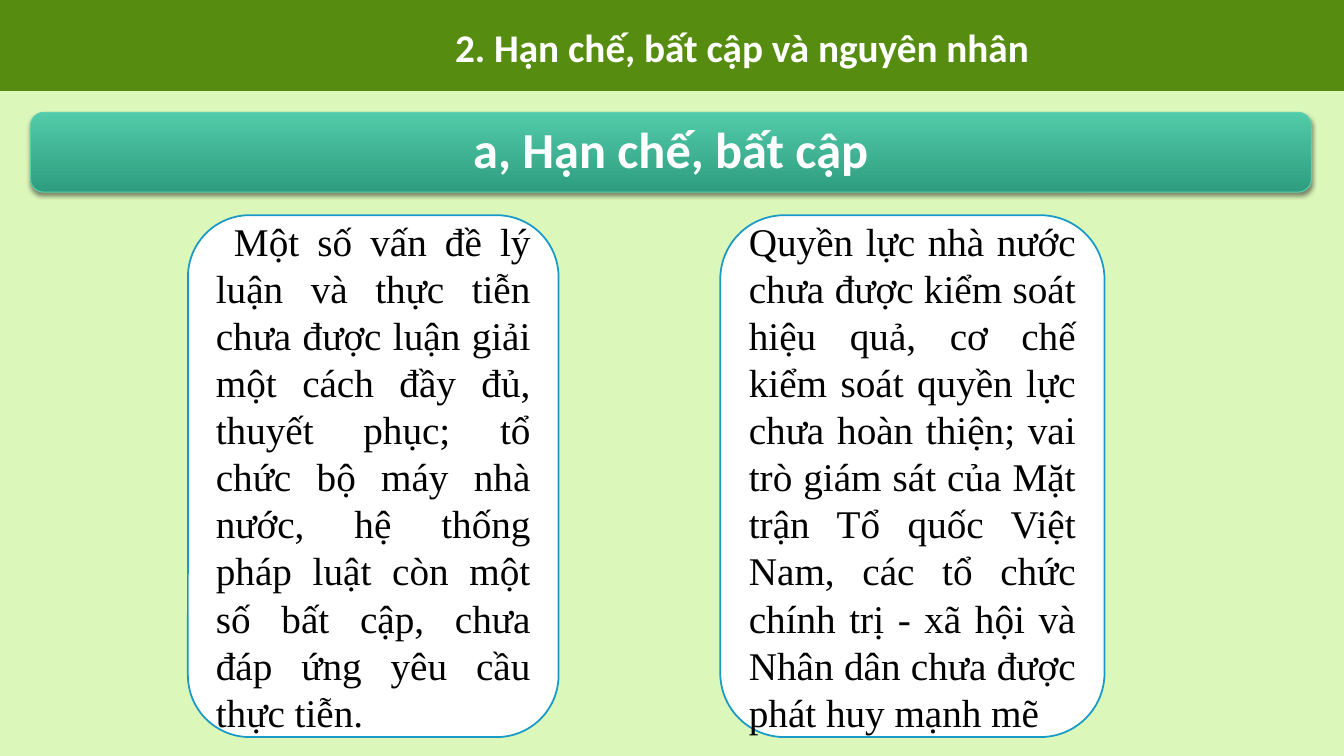
import pptx
import pptx.dml.color
import pptx.enum.shapes
import pptx.enum.text
import pptx.oxml
import pptx.oxml.ns
import pptx.util

RGB = pptx.dml.color.RGBColor
SHAPE = pptx.enum.shapes.MSO_SHAPE
ALIGN = pptx.enum.text.PP_ALIGN
ANCHOR = pptx.enum.text.MSO_ANCHOR

WHITE = RGB(0xFF, 0xFF, 0xFF)
BLACK = RGB(0x00, 0x00, 0x00)
HEADER_GREEN = RGB(0x56, 0x8D, 0x11)
PAGE_GREEN = RGB(0xDC, 0xF7, 0xBA)
BANNER_TOP = RGB(0x52, 0xCB, 0xA9)
BANNER_BOTTOM = RGB(0x2E, 0x9D, 0x7F)
BANNER_LINE = RGB(0x5D, 0xCE, 0xAF)
CARD_LINE = RGB(0x19, 0x99, 0xC6)

PAGE_WIDTH, PAGE_HEIGHT = 1280, 720
HEADER_HEIGHT = 88
EMU_PER_PX = 9525

CARD_TOP, CARD_HEIGHT = 205, 497
CARDS = [
    (179, 353, " Một số vấn đề lý luận và thực tiễn chưa được luận giải một cách "
               "đầy đủ, thuyết phục; tổ chức bộ máy nhà nước, hệ thống pháp luật "
               "còn một số bất cập, chưa đáp ứng yêu cầu thực tiễn."),
    (686, 366, "Quyền lực nhà nước chưa được kiểm soát hiệu quả, cơ chế kiểm soát "
               "quyền lực chưa hoàn thiện; vai trò giám sát của Mặt trận Tổ quốc "
               "Việt Nam, các tổ chức chính trị - xã hội và Nhân dân chưa được "
               "phát huy mạnh mẽ"),
]


def px(*lengths):
    return [pptx.util.Emu(length * EMU_PER_PX) for length in lengths]


def add_panel(page, kind, box, fill=None, line=None, line_width=1.25):
    panel = page.shapes.add_shape(kind, *px(*box))
    panel.shadow.inherit = False
    if fill is not None:
        panel.fill.solid()
        panel.fill.fore_color.rgb = fill
    if line is None:
        panel.line.fill.background()
    else:
        panel.line.color.rgb = line
        panel.line.width = pptx.util.Pt(line_width)
    return panel


def write(shape, text, font, size, color, align, bold=False):
    frame = shape.text_frame
    frame.word_wrap = True
    para = frame.paragraphs[0]
    para.text = text
    para.alignment = align
    para.font.name = font
    para.font.size = pptx.util.Pt(size)
    para.font.bold = bold
    para.font.color.rgb = color
    return para


def add_soft_shadow(shape):
    effects = shape.element.spPr.find(pptx.oxml.ns.qn("a:effectLst"))
    effects.append(pptx.oxml.parse_xml(
        f'<a:outerShdw {pptx.oxml.ns.nsdecls("a")} blurRad="39370" dist="22860" '
        'dir="5400000" rotWithShape="0"><a:srgbClr val="000000">'
        '<a:alpha val="45000"/></a:srgbClr></a:outerShdw>'))


def backdrop(page, box):
    left, top, width, height = box
    add_panel(page, SHAPE.RECTANGLE, box, HEADER_GREEN)
    body = (left, top + HEADER_HEIGHT, width, height - HEADER_HEIGHT)
    add_panel(page, SHAPE.RECTANGLE, body, PAGE_GREEN, PAGE_GREEN)


def header(page, box):
    # The title is centred to the right of an empty margin
    left, top, width, height = box
    title = page.shapes.add_textbox(*px(left + 159, top + 17, width - 185, height - 33))
    write(title, "2. Hạn chế, bất cập và nguyên nhân", "Calibri", 28, WHITE,
          ALIGN.CENTER, bold=True)


def banner(page, box):
    panel = add_panel(page, SHAPE.ROUNDED_RECTANGLE, box, line=BANNER_LINE, line_width=0.75)
    panel.fill.gradient()
    panel.fill.gradient_angle = 270
    first, last = panel.fill.gradient_stops
    first.color.rgb, first.position = BANNER_TOP, 0
    last.color.rgb, last.position = BANNER_BOTTOM, 1
    add_soft_shadow(panel)
    panel.text_frame.vertical_anchor = ANCHOR.MIDDLE
    para = write(panel, "a, Hạn chế, bất cập", "Calibri", 36, WHITE,
                 ALIGN.CENTER, bold=True)
    para.line_spacing = 0.9


def card(page, box, text):
    panel = add_panel(page, SHAPE.ROUNDED_RECTANGLE, box, WHITE, CARD_LINE)
    panel.text_frame.vertical_anchor = ANCHOR.MIDDLE
    write(panel, text, "Times New Roman", 28, BLACK, ALIGN.JUSTIFY)


def main():
    deck = pptx.Presentation()
    deck.slide_width, deck.slide_height = px(PAGE_WIDTH, PAGE_HEIGHT)
    page = deck.slides.add_slide(deck.slide_layouts[6])

    backdrop(page, (0, 0, PAGE_WIDTH, PAGE_HEIGHT))
    banner(page, (29, 107, 1220, 76))
    for left, width, text in CARDS:
        card(page, (left, CARD_TOP, width, CARD_HEIGHT), text)
    header(page, (0, 0, PAGE_WIDTH, HEADER_HEIGHT))
    deck.save("out.pptx")


if __name__ == "__main__":
    main()
